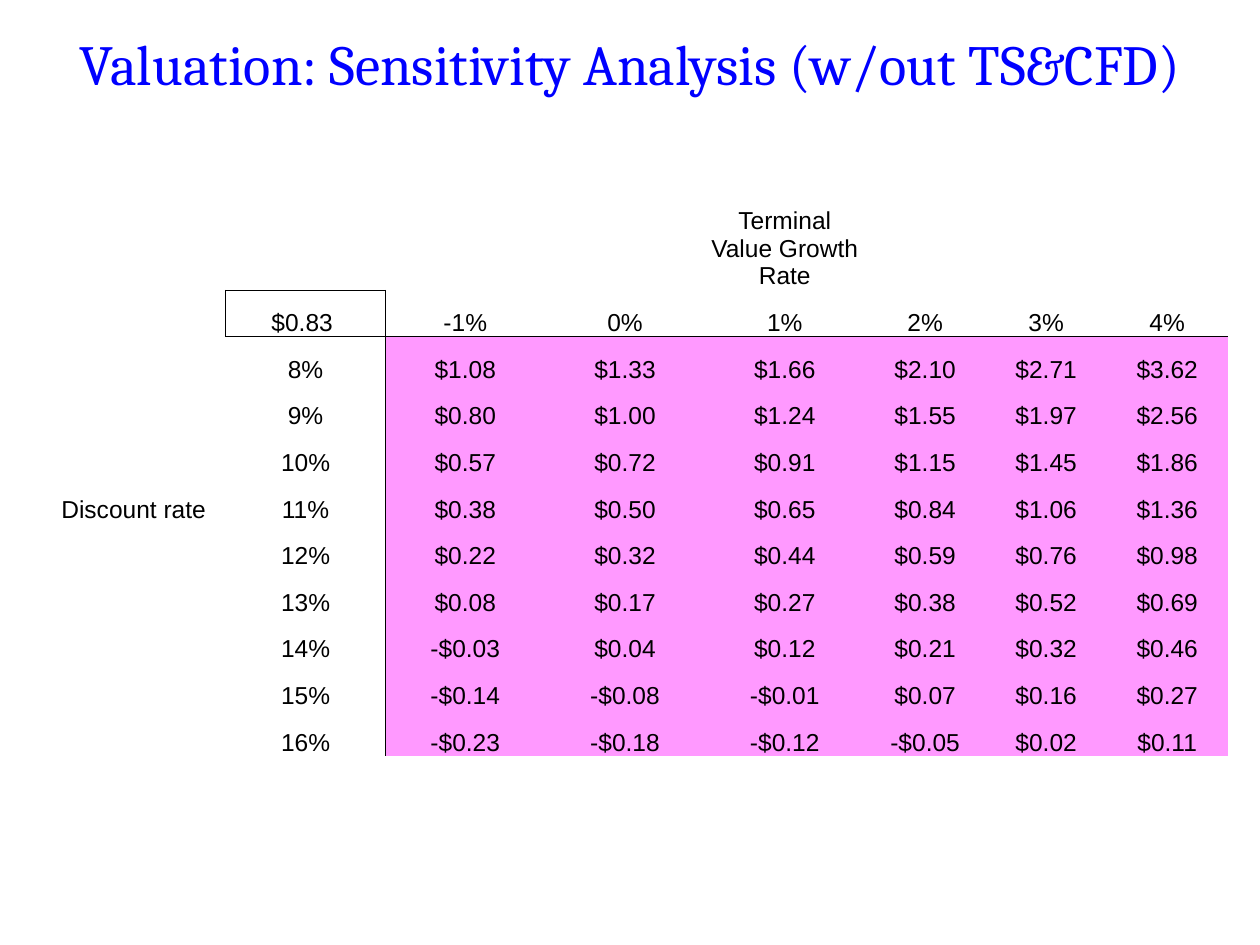
"""Build a slide with a valuation sensitivity table."""
import lxml.etree
import pptx
import pptx.dml.color
import pptx.enum.text
import pptx.oxml.ns
import pptx.util

Cm, Pt = pptx.util.Cm, pptx.util.Pt
qn = pptx.oxml.ns.qn

TITLE = "Valuation: Sensitivity Analysis (w/out TS&CFD)"
GROWTH_LABEL = "Terminal Value Growth Rate"
RATE_LABEL = "Discount rate"
BASE_VALUE = "$0.83 "
GROWTH_RATES = ["-1%", "0%", "1%", "2%", "3%", "4%"]
VALUES = {
    "8%": ["$1.08", "$1.33", "$1.66", "$2.10", "$2.71", "$3.62"],
    "9%": ["$0.80", "$1.00", "$1.24", "$1.55", "$1.97", "$2.56"],
    "10%": ["$0.57", "$0.72", "$0.91", "$1.15", "$1.45", "$1.86"],
    "11%": ["$0.38", "$0.50", "$0.65", "$0.84", "$1.06", "$1.36"],
    "12%": ["$0.22", "$0.32", "$0.44", "$0.59", "$0.76", "$0.98"],
    "13%": ["$0.08", "$0.17", "$0.27", "$0.38", "$0.52", "$0.69"],
    "14%": ["-$0.03", "$0.04", "$0.12", "$0.21", "$0.32", "$0.46"],
    "15%": ["-$0.14", "-$0.08", "-$0.01", "$0.07", "$0.16", "$0.27"],
    "16%": ["-$0.23", "-$0.18", "-$0.12", "-$0.05", "$0.02", "$0.11"],
}
THEME = {
    "title": ("Cambria", 32.4, "0000FF"),
    "cell": ("Arial", 14, "000000"),
    "fill": "FF99FF",
    "border": "000000",
    "border_width": 0.5,
}
COL_WIDTHS = [3.71] + [3.22] * 4 + [2.44] * 3
ROW_HEIGHTS = [1.84] + [0.94] * (len(VALUES) + 1)


def rgb(value):
    return pptx.dml.color.RGBColor.from_string(value)


def write(tf, text, style):
    p = tf.paragraphs[0]
    p.text = text
    p.alignment = pptx.enum.text.PP_ALIGN.CENTER
    name, size, color = THEME[style]
    p.font.name, p.font.size = name, Pt(size)
    p.font.color.rgb = rgb(color)


def table_rows():
    rows = [["", "", "", "", GROWTH_LABEL, "", "", ""], ["", BASE_VALUE] + GROWTH_RATES]
    for rate, values in VALUES.items():
        rows.append([RATE_LABEL if rate == "11%" else "", rate] + values)
    return rows


def has_rule_above(row, col):
    return (row == 1 and col == 1) or (row == 2 and col >= 1)


def has_rule_left(row, col):
    return (row == 1 and col == 1) or (row >= 1 and col == 2)


def add_borders(cell, row, col):
    sides = {
        "a:lnL": has_rule_left(row, col),
        "a:lnR": has_rule_left(row, col + 1),
        "a:lnT": has_rule_above(row, col),
        "a:lnB": has_rule_above(row + 1, col),
    }
    tc_pr = cell._tc.get_or_add_tcPr()
    for i, (tag, drawn) in enumerate(sides.items()):
        ln = lxml.etree.Element(qn(tag), w=str(Pt(THEME["border_width"])))
        if drawn:
            fill = lxml.etree.SubElement(ln, qn("a:solidFill"))
            lxml.etree.SubElement(fill, qn("a:srgbClr"), val=THEME["border"])
        else:
            lxml.etree.SubElement(ln, qn("a:noFill"))
        tc_pr.insert(i, ln)


def add_title(s):
    tf = s.shapes.add_textbox(Cm(0), Cm(0.84), Cm(25.4), Cm(1.27)).text_frame
    tf.word_wrap = True
    tf.vertical_anchor = pptx.enum.text.MSO_ANCHOR.BOTTOM
    tf.margin_left = tf.margin_right = Cm(0.3)
    tf.margin_top = tf.margin_bottom = Cm(0.15)
    write(tf, TITLE, "title")


def add_sensitivity_table(s):
    rows = table_rows()
    table = s.shapes.add_table(
        len(rows), len(COL_WIDTHS), Cm(0.84), Cm(4.01),
        Cm(sum(COL_WIDTHS)), Cm(sum(ROW_HEIGHTS)),
    ).table
    table.first_row = table.horz_banding = False
    for column, width in zip(table.columns, COL_WIDTHS):
        column.width = Cm(width)
    for row, height in zip(table.rows, ROW_HEIGHTS):
        row.height = Cm(height)
    for r, texts in enumerate(rows):
        for c, text in enumerate(texts):
            cell = table.cell(r, c)
            cell.vertical_anchor = pptx.enum.text.MSO_ANCHOR.BOTTOM
            cell.margin_left = cell.margin_right = cell.margin_top = Cm(0.02)
            cell.margin_bottom = Cm(0)
            write(cell.text_frame, text, "cell")
            if r >= 2 and c >= 2:
                cell.fill.solid()
                cell.fill.fore_color.rgb = rgb(THEME["fill"])
            else:
                cell.fill.background()
            add_borders(cell, r, c)


def main():
    prs = pptx.Presentation()
    prs.slide_width, prs.slide_height = Cm(25.4), Cm(19.05)
    s = prs.slides.add_slide(prs.slide_layouts[6])
    add_title(s)
    add_sensitivity_table(s)
    prs.save("out.pptx")


if __name__ == "__main__":
    main()
